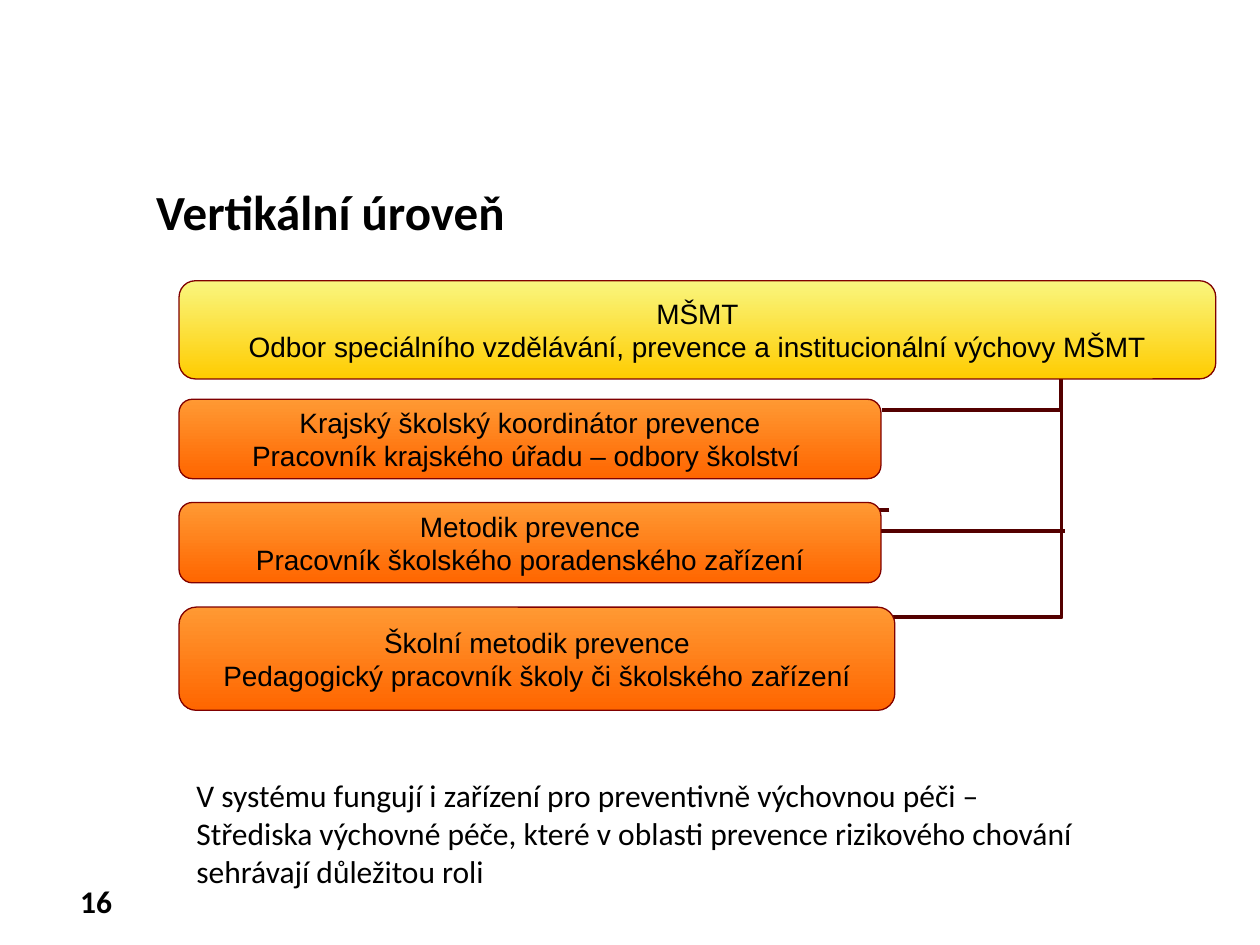
from lxml.etree import SubElement
from pptx import Presentation
from pptx.dml.color import RGBColor
from pptx.enum.shapes import MSO_CONNECTOR as Link, MSO_SHAPE as Form
from pptx.enum.text import MSO_ANCHOR as Anchor, PP_ALIGN as Align
from pptx.oxml.ns import qn
from pptx.util import Cm, Pt


def color(code):
    return RGBColor.from_string(code)


def write(frame, text, font="Calibri", size=18, bold=False, ink="000000",
          align=Align.LEFT):
    """Fill a text frame, one paragraph per line of text."""
    frame.word_wrap = True
    frame.text = text
    for par in frame.paragraphs:
        par.alignment = align
        par.font.name = font
        par.font.size = Pt(size)
        par.font.bold = bold
        par.font.color.rgb = color(ink)


class Chart:
    """Draws on one slide in the style of the hierarchy."""
    gold = ("F9F67F", "FFCC00")
    flame = ("FF9933", "FF6600")
    edge = "800000"
    wire = "540000"
    left = 3.61

    def __init__(self, slide):
        self.shapes = slide.shapes

    def label(self, text, x, y, wide, high, **style):
        box = self.shapes.add_textbox(Cm(x), Cm(y), Cm(wide), Cm(high))
        write(box.text_frame, text, **style)

    def level(self, text, y, wide, high, tones):
        box = self.shapes.add_shape(Form.ROUNDED_RECTANGLE, Cm(self.left),
                                    Cm(y), Cm(wide), Cm(high))
        box.shadow.inherit = False
        box.fill.gradient()
        box.fill.gradient_angle = 270
        for stop, tone in zip(box.fill.gradient_stops, tones):
            stop.color.rgb = color(tone)
        box.line.color.rgb = color(self.edge)
        box.line.width = Pt(0.75)
        frame = box.text_frame
        frame.vertical_anchor = Anchor.MIDDLE
        frame.margin_left = frame.margin_right = Cm(0.13)
        frame.margin_top = frame.margin_bottom = Cm(0.05)
        write(frame, text, font="Arial", size=16, align=Align.CENTER)

    def elbow(self, start, end, kind="bentConnector3", bend=None, turn=0):
        """Bent line; bend is the share of its width, turn is in degrees."""
        line = self.shapes.add_connector(
            Link.ELBOW, *(Cm(v) for v in start + end))
        line.line.color.rgb = color(self.wire)
        line.line.width = Pt(2.25)
        props = line.element.spPr
        SubElement(props, qn("a:effectLst"))
        props.find(qn("a:xfrm")).set("rot", str(turn * 60000))
        geom = props.find(qn("a:prstGeom"))
        geom.set("prst", kind)
        if bend is not None:
            SubElement(geom.find(qn("a:avLst")), qn("a:gd"), name="adj1",
                       fmla=f"val {round(bend * 100000)}")


def main():
    deck = Presentation()
    deck.slide_width, deck.slide_height = Cm(25.4), Cm(19.05)
    chart = Chart(deck.slides.add_slide(deck.slide_layouts[6]))

    chart.label("16", 0.71, 17.65, 1.8, 1.02, bold=True, align=Align.RIGHT)
    chart.label("Vertikální úroveň", 2.9, 3.53, 22.5, 1.6, size=28, bold=True)

    chart.elbow((16.21, 8.36), (22.71, 12.24), bend=0.17, turn=270)
    chart.elbow((17.93, 10.29), (21.46, 10.7), bend=-0.08)
    chart.elbow((17.78, 8.26), (21.39, 7.04), kind="bentConnector2")

    levels = [
        ("MŠMT\nOdbor speciálního vzdělávání, prevence a institucionální "
         "výchovy MŠMT", 5.66, 20.9, 1.98, chart.gold),
        ("Krajský školský koordinátor prevence\n"
         "Pracovník krajského úřadu – odbory školství ",
         8.05, 14.15, 1.6, chart.flame),
        ("Metodik prevence\nPracovník školského poradenského zařízení",
         10.13, 14.15, 1.62, chart.flame),
        ("Školní metodik prevence\n"
         "Pedagogický pracovník školy či školského zařízení",
         12.24, 14.43, 2.08, chart.flame),
    ]
    for level in levels:
        chart.level(*level)

    chart.label("V systému fungují i zařízení pro preventivně výchovnou péči –\n"
                "Střediska výchovné péče, které v oblasti prevence "
                "rizikového chování\nsehrávají důležitou roli",
                3.71, 15.52, 19.53, 2.57)
    deck.save("out.pptx")


if __name__ == "__main__":
    main()
